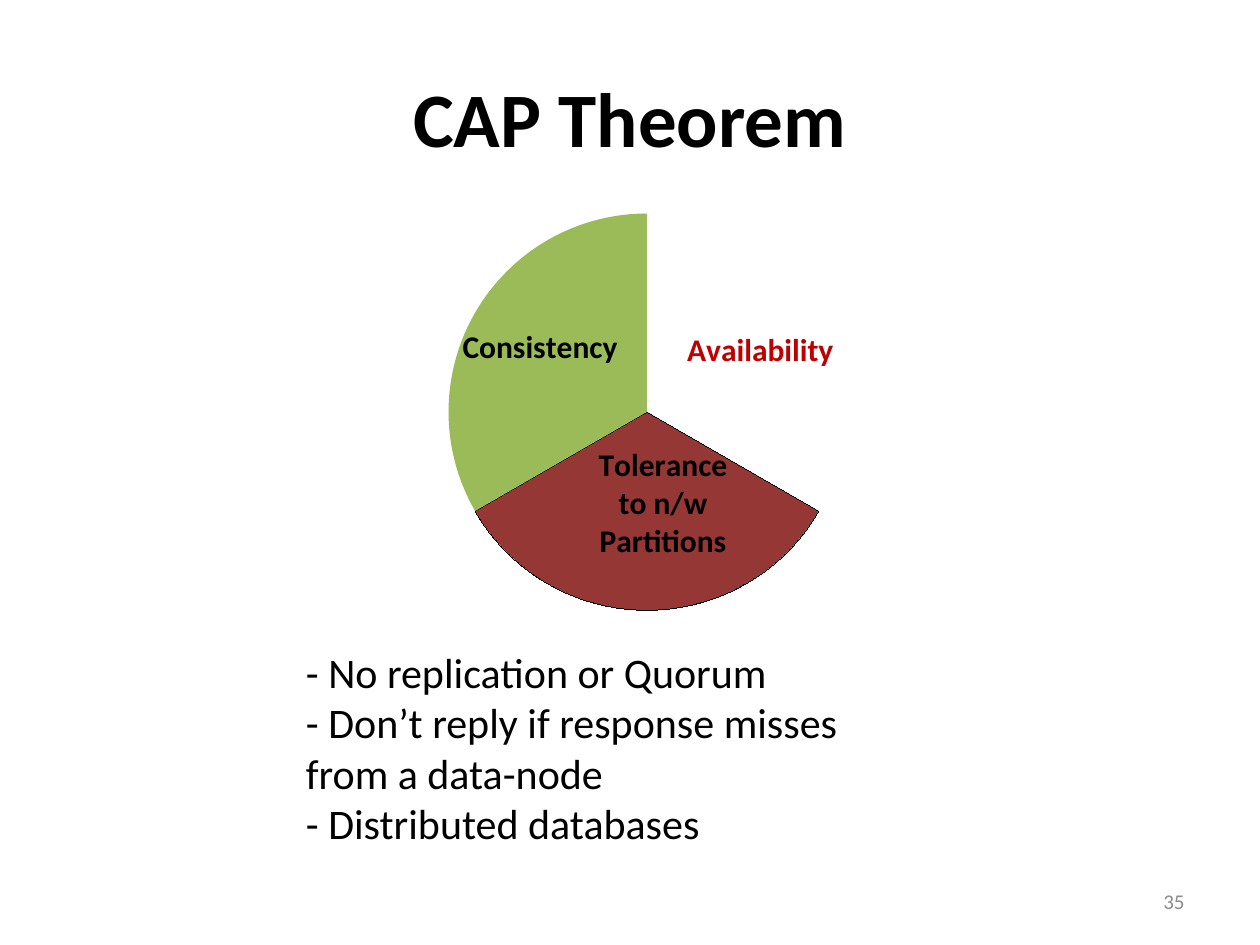
"""Build the CAP Theorem slide with its pie chart."""
import pptx
import pptx.chart.data
import pptx.dml.color
import pptx.enum.chart
import pptx.enum.text
import pptx.oxml
import pptx.oxml.ns
import pptx.util

Inches = pptx.util.Inches
Pt = pptx.util.Pt
ALIGN = pptx.enum.text.PP_ALIGN
ANCHOR = pptx.enum.text.MSO_ANCHOR
PIE = pptx.enum.chart.XL_CHART_TYPE.PIE
CENTER = pptx.enum.chart.XL_LABEL_POSITION.CENTER
SLICES = [
    ("Consistency", None, None, "000000", (-0.17, -0.03)),
    ("Availability", "953735", "000000", "C00000", (0.1, -0.32)),
    ("Tolerance to n/w Partitions", "9BBB59", None, "000000", (0.09, 0.28)),
]
LINES = [
    "- No replication or Quorum",
    "- Don’t reply if response misses",
    "from a data-node",
    "- Distributed databases",
]


def paint(color, code):
    """Set a colour from a hex string."""
    color.rgb = pptx.dml.color.RGBColor.from_string(code)


def fill(form, code):
    """Make a fill solid, or clear it when there is no code."""
    if code:
        form.solid()
        paint(form.fore_color, code)
    else:
        form.background()


def style(font, size, code="000000", bold=False):
    """Set the look of a font."""
    form = {"name": "Calibri", "size": Pt(size), "bold": bold}
    for key, value in form.items():
        setattr(font, key, value)
    paint(font.color, code)


def place(shape, left, top, width, height):
    """Move and size a shape in inches."""
    form = {"left": left, "top": top, "width": width, "height": height}
    for key, value in form.items():
        setattr(shape, key, Inches(value))


def write(shape, lines, size, code="000000", bold=False, align=ALIGN.LEFT,
          anchor=ANCHOR.TOP, wrap=True):
    """Put styled lines of text in a shape."""
    frame = shape.text_frame
    form = {"text": "\n".join(lines), "word_wrap": wrap,
            "vertical_anchor": anchor}
    for key, value in form.items():
        setattr(frame, key, value)
    for para in frame.paragraphs:
        para.alignment = align
        style(para.runs[0].font, size, code, bold)


def layout(**parts):
    """Return a manual chart layout element."""
    space = pptx.oxml.ns.nsdecls("c")
    items = "".join(f'<c:{key} val="{value}"/>' for key, value in parts.items())
    return pptx.oxml.parse_xml(
        f"<c:layout {space}><c:manualLayout>{items}</c:manualLayout></c:layout>")


def label(point, code, shift):
    """Show the category name of a slice, moved from its middle."""
    mark = point.data_label
    style(mark.font, 18, code, True)
    mark.position = CENTER
    node = mark._dLbl
    for key, value in {"showCatName": "1", "showVal": "0",
                       "showPercent": "0", "showLegendKey": "0"}.items():
        node.find(pptx.oxml.ns.qn(f"c:{key}")).set("val", value)
    node.insert(1, layout(x=shift[0], y=shift[1]))


def pie(slide):
    """Add the pie chart with three equal slices."""
    data = pptx.chart.data.CategoryChartData()
    data.categories = [part[0] for part in SLICES]
    data.add_series("Series 1", [33] * len(SLICES))
    box = [Inches(value) for value in (0.5, 1.33, 9, 4)]
    chart = slide.shapes.add_chart(PIE, *box, data).chart
    chart.has_title = chart.has_legend = False
    style(chart.font, 18)
    plot = chart.plots[0]
    plot.vary_by_categories = True
    area = chart._chartSpace.chart.plotArea
    for old in area.findall(pptx.oxml.ns.qn("c:layout")):
        area.remove(old)
    area.insert(0, layout(layoutTarget="inner", xMode="edge", yMode="edge",
                          x=0.34, y=0.09, w=0.35, h=0.79))
    series = plot.series[0]
    for key, value in {"show_category_name": True, "show_value": False}.items():
        setattr(series.data_labels, key, value)
    for lead in area.iter(pptx.oxml.ns.qn("c:showLeaderLines")):
        lead.set("val", "0")
    for spot, (_, code, edge, ink, shift) in enumerate(SLICES):
        point = series.points[spot]
        fill(point.format.fill, code)
        fill(point.format.line.fill, edge)
        label(point, ink, shift)


def text(slide, box, lines, size, **form):
    """Add a text box."""
    shape = slide.shapes.add_textbox(*[Inches(value) for value in box])
    write(shape, lines, size, **form)


def main():
    """Build and save the slide."""
    deck = pptx.Presentation()
    deck.slide_width, deck.slide_height = Inches(10), Inches(7.5)
    slide = deck.slides.add_slide(deck.slide_layouts[5])
    title = slide.shapes.title
    place(title, 0.5, 0.3, 9, 1.25)
    write(title, ["CAP Theorem"], 44, bold=True, align=ALIGN.CENTER,
          anchor=ANCHOR.MIDDLE)
    pie(slide)
    text(slide, (2.33, 5.08, 4.54, 1.72), LINES, 24, wrap=False)
    text(slide, (7.17, 6.95, 2.33, 0.4), ["35"], 12, code="8C8C8C",
         align=ALIGN.RIGHT, anchor=ANCHOR.MIDDLE)
    deck.save("out.pptx")


if __name__ == "__main__":
    main()
